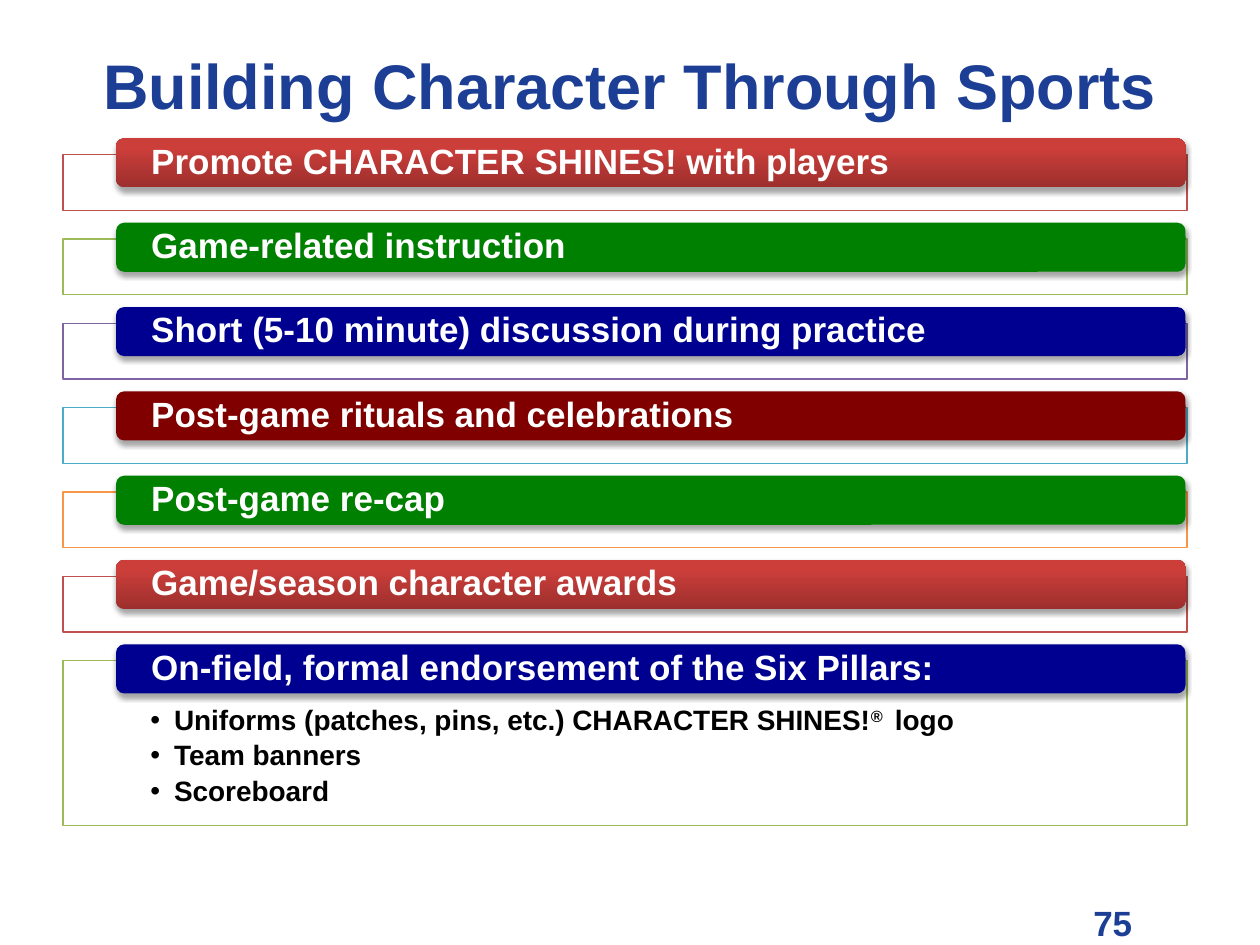
from lxml.etree import SubElement
from pptx import Presentation
from pptx.dml.color import RGBColor
from pptx.enum.shapes import MSO_SHAPE as Shape
from pptx.enum.text import MSO_ANCHOR as Anchor, PP_ALIGN as Align
from pptx.oxml.ns import qn
from pptx.util import Cm, Pt

TITLE = "Building Character Through Sports"
PAGE_NUMBER = "75"
BLUE, NAVY, GREEN, MAROON = "1C3F95", "000090", "008000", "800000"
RED_FADE = ("9C2F2D", "CB3E3A")  # bottom, top

# heading, bar fill, frame line
TOPICS = [
    ("Promote CHARACTER SHINES! with players", RED_FADE, "C0504D"),
    ("Game-related instruction", GREEN, "9BBB59"),
    ("Short (5-10 minute) discussion during practice", NAVY, "8064A2"),
    ("Post-game rituals and celebrations", MAROON, "4BACC6"),
    ("Post-game re-cap", GREEN, "F79646"),
    ("Game/season character awards", RED_FADE, "C0504D"),
    ("On-field, formal endorsement of the Six Pillars:", NAVY, "9BBB59"),
]
# each bullet is a list of (text, is superscript); they sit in the last frame
BULLETS = [
    [("Uniforms (patches, pins, etc.) CHARACTER SHINES!", False),
     ("® ", True), (" logo", False)],
    [("Team banners", False)],
    [("Scoreboard", False)],
]

# centimetres
FRAME_LEFT, FRAME_TOP, FRAME_WIDTH = 1.27, 3.12, 22.66
FRAME_HEIGHT, LAST_FRAME_HEIGHT = 1.12, 3.32
PITCH = 1.7
BAR_LEFT, BAR_WIDTH, BAR_HEIGHT, BAR_RISE = 2.34, 21.56, 0.99, 0.33


def color(hex_string):
    return RGBColor.from_string(hex_string)


def style_font(para, size, hex_string):
    font = para.font
    font.name, font.size, font.bold = "Arial", Pt(size), True
    font.color.rgb = color(hex_string)


def set_insets(frame, left, top, right, bottom):
    frame.margin_left, frame.margin_top = Cm(left), Cm(top)
    frame.margin_right, frame.margin_bottom = Cm(right), Cm(bottom)


def add_label(page, text, size, left, top, width, height, wrap, align):
    box = page.shapes.add_textbox(Cm(left), Cm(top), Cm(width), Cm(height))
    frame = box.text_frame
    frame.word_wrap = wrap
    frame.vertical_anchor = Anchor.MIDDLE
    para = frame.paragraphs[0]
    para.text, para.alignment = text, align
    style_font(para, size, BLUE)


def add_frame(page, top, height, line):
    box = page.shapes.add_shape(
        Shape.RECTANGLE, Cm(FRAME_LEFT), Cm(top), Cm(FRAME_WIDTH), Cm(height))
    box.shadow.inherit = False
    box.fill.solid()
    box.fill.fore_color.rgb = color("FFFFFF")
    tint = box.fill._xPr.find(qn("a:solidFill"))[0]
    SubElement(tint, qn("a:alpha"), val="90000")
    box.line.color.rgb = color(line)
    box.line.width = Pt(0.75)
    return box


def add_drop_shadow(box):
    box.shadow.inherit = False
    effects = box._element.spPr.find(qn("a:effectLst"))
    shadow = SubElement(effects, qn("a:outerShdw"), blurRad="40000",
                        dist="23000", dir="5400000", rotWithShape="0")
    tint = SubElement(shadow, qn("a:srgbClr"), val="000000")
    SubElement(tint, qn("a:alpha"), val="35000")


def add_bar(page, top, text, fill):
    box = page.shapes.add_shape(
        Shape.ROUNDED_RECTANGLE, Cm(BAR_LEFT), Cm(top), Cm(BAR_WIDTH), Cm(BAR_HEIGHT))
    if fill == RED_FADE:
        box.fill.gradient()
        box.fill.gradient_angle = 90
        for stop, shade, position in zip(box.fill.gradient_stops, fill, (0, 0.8)):
            stop.color.rgb, stop.position = color(shade), position
    else:
        box.fill.solid()
        box.fill.fore_color.rgb = color(fill)
    box.line.fill.background()
    add_drop_shadow(box)
    frame = box.text_frame
    set_insets(frame, 0.66, 0, 0.66, 0)
    frame.vertical_anchor = Anchor.MIDDLE
    para = frame.paragraphs[0]
    para.text, para.alignment, para.line_spacing = text, Align.LEFT, 0.9
    style_font(para, 20, "FFFFFF")


def fill_bullets(box):
    frame = box.text_frame
    set_insets(frame, 1.76, 0.92, 1.76, 0.3)
    frame.vertical_anchor = Anchor.TOP
    for index, spans in enumerate(BULLETS):
        para = frame.add_paragraph() if index else frame.paragraphs[0]
        para.level, para.alignment = 1, Align.LEFT
        para.line_spacing, para.space_after = 0.9, Pt(3)
        props = para._p.get_or_add_pPr()
        props.set("marL", str(Cm(0.48)))
        props.set("indent", str(-Cm(0.48)))
        SubElement(props, qn("a:buFont"), typeface="Arial")
        SubElement(props, qn("a:buChar"), char="•")
        style_font(para, 16, "000000")
        for text, raised in spans:
            span = para.add_run()
            span.text = text
            if raised:
                span._r.get_or_add_rPr().set("baseline", "30000")


def main():
    deck = Presentation()
    deck.slide_width, deck.slide_height = Cm(25.4), Cm(19.05)
    page = deck.slides.add_slide(deck.slide_layouts[6])
    add_label(page, PAGE_NUMBER, 20, 21.79, 18.03, 1.37, 1.12, False, Align.LEFT)
    add_label(page, TITLE, 36, 1.27, 0.76, 22.86, 1.88, True, Align.CENTER)
    last = len(TOPICS) - 1
    for index, (text, fill, line) in enumerate(TOPICS):
        top = FRAME_TOP + index * PITCH
        height = LAST_FRAME_HEIGHT if index == last else FRAME_HEIGHT
        box = add_frame(page, top, height, line)
        if index == last:
            fill_bullets(box)
        add_bar(page, top - BAR_RISE, text, fill)
    deck.save("out.pptx")


if __name__ == "__main__":
    main()
